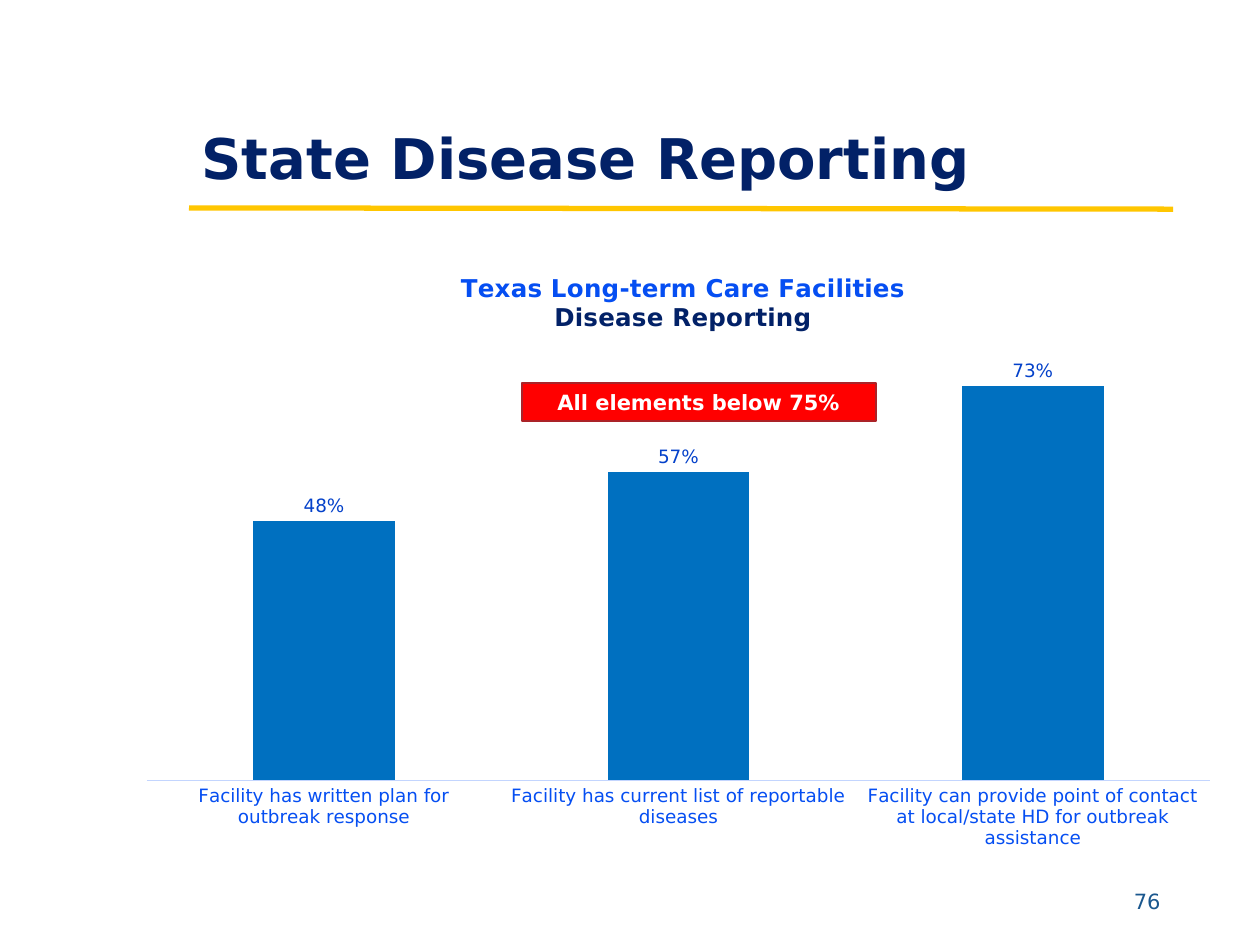
from lxml import etree
from pptx import Presentation
from pptx.chart.data import CategoryChartData
from pptx.dml.color import RGBColor
from pptx.enum.chart import XL_CHART_TYPE as ChartType
from pptx.enum.chart import XL_LABEL_POSITION as LabelPosition
from pptx.enum.chart import XL_TICK_MARK as TickMark
from pptx.enum.shapes import MSO_CONNECTOR as Connector
from pptx.enum.shapes import MSO_SHAPE as Shape
from pptx.enum.text import MSO_ANCHOR as Anchor
from pptx.enum.text import MSO_AUTO_SIZE as AutoSize
from pptx.enum.text import PP_ALIGN as Align
from pptx.oxml.ns import qn
from pptx.util import Inches, Pt

NAVY, BLUE, LABEL_BLUE, BAR_BLUE = "022167", "054EF2", "0441CA", "0070C0"
PALE_BLUE, PAGE_BLUE, GOLD = "C3D5FE", "1A578E", "FFC600"
RED, DARK_RED, WHITE = "FF0000", "AB2328", "FFFFFF"


def rgb(color):
    return RGBColor.from_string(color)


def inches(*lengths):
    return [Inches(length) for length in lengths]


def set_layout(parent, **fractions):
    """Place a chart part by fractions of the chart's size."""
    layout = parent.find(qn("c:layout"))
    if layout is None:
        layout = etree.Element(qn("c:layout"))
        text = parent.find(qn("c:tx"))
        parent.insert(0 if text is None else 1, layout)
    manual = etree.SubElement(layout, qn("c:manualLayout"))
    if "w" in fractions:
        etree.SubElement(manual, qn("c:layoutTarget"), val="inner")
    for side in "xy":
        etree.SubElement(manual, qn(f"c:{side}Mode"), val="edge")
    for side, fraction in fractions.items():
        etree.SubElement(manual, qn(f"c:{side}"), val=str(fraction))


class SlideBuilder:
    """Holds the font and the slide being filled."""

    def __init__(self, slide, font="DejaVu Sans"):
        self.slide = slide
        self.shapes = slide.shapes
        self.font = font

    def style(self, font, size, color, bold=False):
        font.name = self.font
        font.size = Pt(size)
        font.bold = bold
        font.color.rgb = rgb(color)

    def fill_frame(self, frame, text, size, color, bold=False,
                   align=Align.LEFT, anchor=Anchor.MIDDLE):
        frame.word_wrap = True
        frame.auto_size = AutoSize.NONE
        frame.vertical_anchor = anchor
        paragraph = frame.paragraphs[0]
        paragraph.alignment = align
        run = paragraph.add_run()
        run.text = text
        self.style(run.font, size, color, bold)
        return paragraph

    def title(self, text, left, top, width, height):
        title = self.shapes.title
        title.left, title.top, title.width, title.height = inches(left, top, width, height)
        heading = self.fill_frame(title.text_frame, text, 32, NAVY, True, anchor=Anchor.BOTTOM)
        heading.line_spacing = 0.9

    def rule(self, x1, y1, x2, y2, color, width):
        rule = self.shapes.add_connector(Connector.STRAIGHT, *inches(x1, y1, x2, y2))
        rule.line.color.rgb = rgb(color)
        rule.line.width = Pt(width)
        etree.SubElement(rule._element.spPr, qn("a:effectLst"))

    def text(self, text, *box, size, color, align):
        frame = self.shapes.add_textbox(*inches(*box)).text_frame
        self.fill_frame(frame, text, size, color, align=align)

    def callout(self, text, *box):
        callout = self.shapes.add_shape(Shape.RECTANGLE, *inches(*box))
        callout.shadow.inherit = False
        callout.fill.solid()
        callout.fill.fore_color.rgb = rgb(RED)
        callout.line.color.rgb = rgb(DARK_RED)
        callout.line.width = Pt(1)
        self.fill_frame(callout.text_frame, text, 12, WHITE, True, Align.CENTER)

    def column_chart(self, title_lines, shares, *box):
        data = CategoryChartData(number_format="0%")
        data.categories = list(shares)
        data.add_series("Series 1", list(shares.values()))
        chart = self.shapes.add_chart(
            ChartType.COLUMN_CLUSTERED, *inches(*box), data).chart
        self.style(chart.font, 10, NAVY)
        chart.has_legend = False
        self.chart_title(chart, title_lines)
        self.chart_axes(chart)

        plot = chart.plots[0]
        plot.gap_width = 150
        plot.overlap = -25
        plot.vary_by_categories = False
        bars = plot.series[0].format.fill
        bars.solid()
        bars.fore_color.rgb = rgb(BAR_BLUE)
        plot.has_data_labels = True
        labels = plot.data_labels
        labels.show_value = True
        labels.number_format = "0%"
        labels.number_format_is_linked = False
        labels.position = LabelPosition.OUTSIDE_END
        self.style(labels.font, 10.5, LABEL_BLUE)
        plot_area = chart._chartSpace.chart.plotArea
        set_layout(plot_area, x=0.02, y=0.17, w=0.96, h=0.7)

    def chart_title(self, chart, lines):
        chart.has_title = True
        title = chart.chart_title
        title.include_in_layout = False
        frame = title.text_frame
        for number, (text, color) in enumerate(lines):
            paragraph = frame.add_paragraph() if number else frame.paragraphs[0]
            run = paragraph.add_run()
            run.text = text
            self.style(run.font, 14, color, True)
        set_layout(title._element, x=0.3, y=0.04)

    def chart_axes(self, chart):
        shares_axis = chart.value_axis
        shares_axis.minimum_scale, shares_axis.maximum_scale = 0, 0.8
        shares_axis.has_major_gridlines = False
        shares_axis.visible = False
        facility_axis = chart.category_axis
        facility_axis.major_tick_mark = TickMark.NONE
        facility_axis.minor_tick_mark = TickMark.NONE
        facility_axis.format.line.color.rgb = rgb(PALE_BLUE)
        facility_axis.format.line.width = Pt(0.75)
        self.style(facility_axis.tick_labels.font, 10.5, BLUE)


def main():
    deck = Presentation()
    deck.slide_width, deck.slide_height = inches(10, 7.5)
    title_only = deck.slide_layouts[5]
    page = SlideBuilder(deck.slides.add_slide(title_only))

    page.rule(1.5, 1.65, 9.31, 1.66, GOLD, 3)
    page.title("State Disease Reporting", 1.5, 0.12, 7.8, 1.45)
    page.text("76", 8, 6.95, 1.31, 0.4, size=12, color=PAGE_BLUE, align=Align.RIGHT)
    page.column_chart(
        [("Texas Long-term Care Facilities", BLUE), ("Disease Reporting", NAVY)],
        {
            "Facility has written plan for outbreak response": 0.48,
            "Facility has current list of reportable diseases": 0.57,
            "Facility can provide point of contact at local/state HD "
            "for outbreak assistance": 0.73,
        },
        0.99, 1.93, 8.79, 4.9)
    page.callout("All elements below 75%", 4.14, 3.04, 2.81, 0.3)
    deck.save("out.pptx")


if __name__ == "__main__":
    main()
